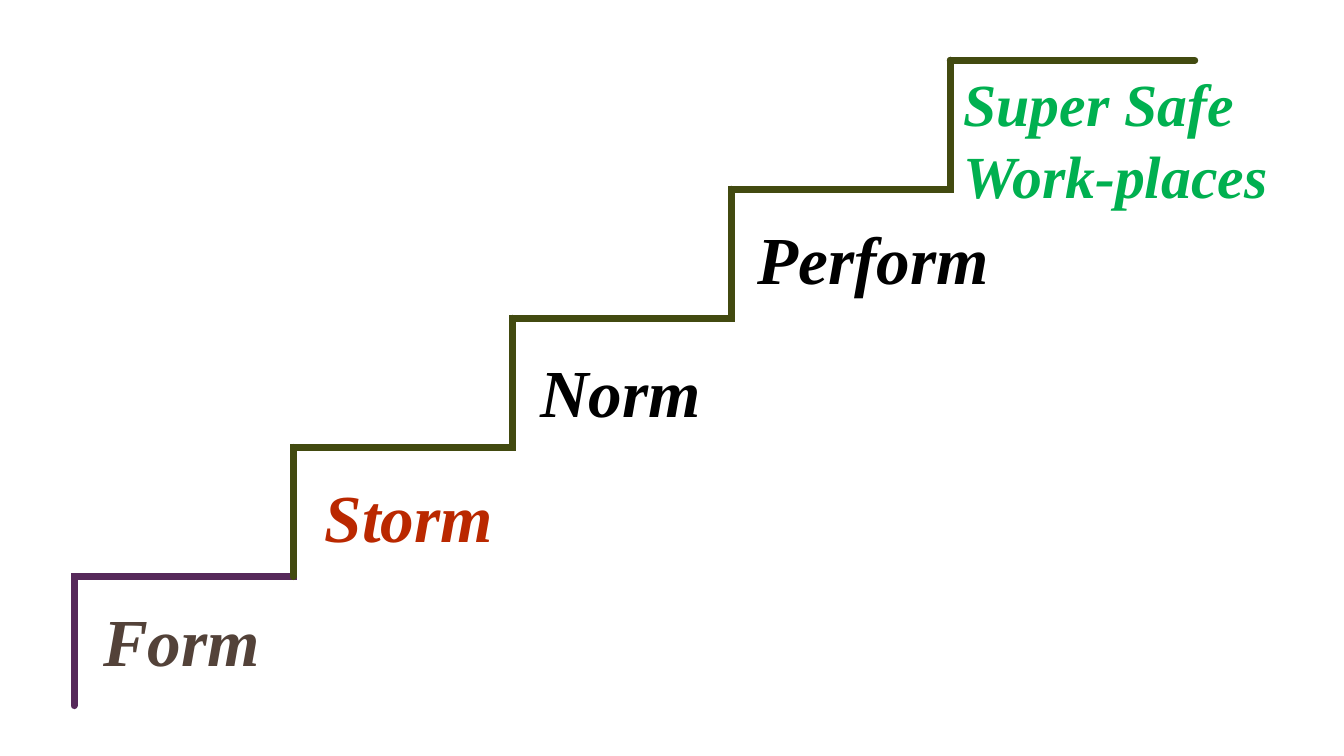
from lxml.etree import SubElement
from pptx import Presentation
from pptx.dml.color import RGBColor
from pptx.enum.shapes import MSO_CONNECTOR
from pptx.enum.text import MSO_AUTO_SIZE
from pptx.oxml.ns import qn
from pptx.util import Cm, Pt


def color(code):
    return RGBColor.from_string(code)


def draw(kind, x1, y1, x2, y2, code):
    """Add a thick stair line with round ends and sharp corners."""
    line = slide.shapes.add_connector(kind, Cm(x1), Cm(y1), Cm(x2), Cm(y2))
    line.line.color.rgb = color(code)
    line.line.width = Pt(3.75)
    props = line._element.spPr
    stroke = props.find(qn("a:ln"))
    stroke.set("cap", "rnd")
    SubElement(stroke, qn("a:miter"), lim="800000")
    SubElement(props, qn("a:effectLst"))
    return line


deck = Presentation()
deck.slide_width, deck.slide_height = Cm(25.4), Cm(14.29)
slide = deck.slides.add_slide(deck.slide_layouts[6])

left, base = 1.4, 13.34
tread, rise = 4.14, 2.44
top = base - 5 * rise
OLIVE = "424A10"

# Each elbow climbs two rises, so it overlaps the next one by one rise.
for step, code in enumerate(["56295A", OLIVE, OLIVE, OLIVE]):
    midx = left + (step + 0.5) * tread
    midy = base - (step + 1) * rise
    stair = draw(MSO_CONNECTOR.ELBOW, midx + rise, midy + tread / 2,
                 midx - rise, midy - tread / 2, code)
    stair._element.spPr.find(qn("a:xfrm")).set("rot", "5400000")

edge = left + 4 * tread
draw(MSO_CONNECTOR.STRAIGHT, edge, top, 22.58, top, OLIVE)

labels = [
    ("Form", 1.7, 11.2, 4.8, 1.8, 36, "534239"),
    ("Storm", 5.89, 8.86, 5.54, 1.8, 36, "BA2800"),
    ("Norm", 9.96, 6.5, 4.8, 1.8, 36, "000000"),
    ("Perform", 14.07, 3.99, 6.81, 1.8, 36, "000000"),
    ("Super Safe Work-places", edge, top, 8.71, 3, 32, "00B050"),
]
for text, x, y, wide, high, size, code in labels:
    box = slide.shapes.add_textbox(Cm(x), Cm(y), Cm(wide), Cm(high))
    frame = box.text_frame
    frame.word_wrap = True
    frame.auto_size = MSO_AUTO_SIZE.SHAPE_TO_FIT_TEXT
    frame.text = text
    font = frame.paragraphs[0].font
    font.name, font.size = "Times New Roman", Pt(size)
    font.bold = font.italic = True
    font.color.rgb = color(code)

deck.save("out.pptx")
